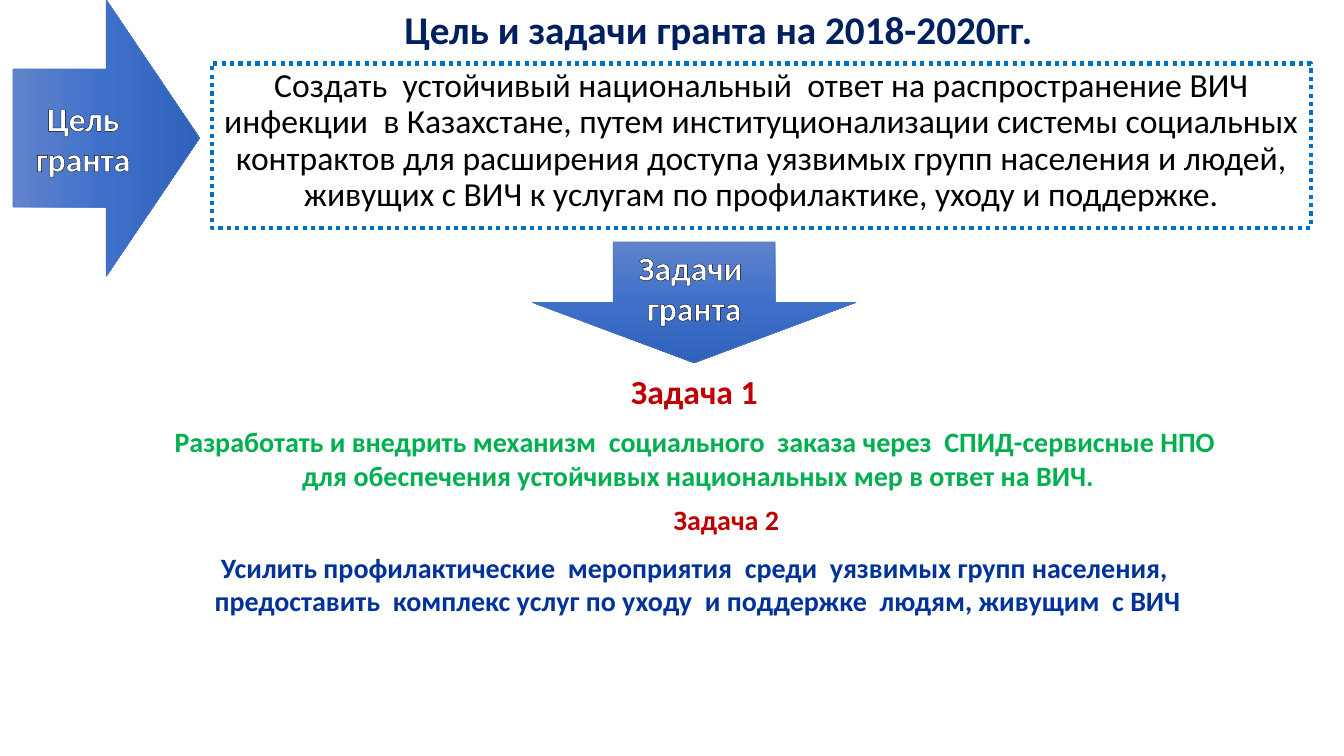
import copy
from dataclasses import dataclass

import pptx
import pptx.dml.color
import pptx.enum.dml
import pptx.enum.shapes
import pptx.enum.text
import pptx.oxml
import pptx.oxml.ns
import pptx.util

Inches = pptx.util.Inches
Pt = pptx.util.Pt
qn = pptx.oxml.ns.qn
MSO_SHAPE = pptx.enum.shapes.MSO_SHAPE
MSO_ANCHOR = pptx.enum.text.MSO_ANCHOR


@dataclass(frozen=True)
class Theme:
    font: str = "Calibri"
    title_size: int = 28
    main_size: int = 24
    task_size: int = 20
    navy: str = "002060"
    black: str = "000000"
    white: str = "FFFFFF"
    red: str = "C00000"
    green: str = "00B050"
    blue: str = "003399"
    frame: str = "0070C0"
    arrow_line: str = "4472C4"
    arrow_gradient: tuple = ("6183CB", "3E70CA", "3062BB")


def rgb(value):
    return pptx.dml.color.RGBColor.from_string(value)


class SlideBuilder:
    def __init__(self, presentation, theme):
        self.theme = theme
        layout = presentation.slide_layouts.get_by_name("Title and Content")
        self.slide = presentation.slides.add_slide(layout)

    def place(self, shape, box):
        shape.left, shape.top, shape.width, shape.height = map(Inches, box)

    def add_text(self, paragraph, text, size, color, bold=True):
        paragraph.alignment = pptx.enum.text.PP_ALIGN.CENTER
        run = paragraph.add_run()
        run.text = text
        run.font.name = self.theme.font
        run.font.size = Pt(size)
        run.font.bold = bold
        run.font.color.rgb = rgb(color)
        return run

    def title(self, text, box):
        shape = self.slide.shapes.title
        self.place(shape, box)
        frame = shape.text_frame
        frame.auto_size = pptx.enum.text.MSO_AUTO_SIZE.NONE
        frame.vertical_anchor = MSO_ANCHOR.MIDDLE
        paragraph = frame.paragraphs[0]
        paragraph.line_spacing = 0.9
        self.add_text(paragraph, text, self.theme.title_size, self.theme.navy)

    def goal(self, text, box):
        """Fill the body placeholder as a dotted frame with unbulleted text."""
        shape = self.slide.placeholders[1]
        self.place(shape, box)
        shape.fill.solid()
        shape.fill.fore_color.rgb = rgb(self.theme.white)
        shape.line.color.rgb = rgb(self.theme.frame)
        shape.line.width = Pt(3)
        shape.line.dash_style = pptx.enum.dml.MSO_LINE.ROUND_DOT
        shape.text_frame.auto_size = pptx.enum.text.MSO_AUTO_SIZE.NONE
        paragraph = shape.text_frame.paragraphs[0]
        paragraph.line_spacing = 0.9
        paragraph.space_before = Pt(10)
        self.add_text(paragraph, text, self.theme.main_size, self.theme.black, bold=False)
        properties = paragraph._p.get_or_add_pPr()
        properties.set("marL", "0")
        properties.set("indent", "0")
        properties.append(pptx.oxml.parse_xml(
            f'<a:buNone {pptx.oxml.ns.nsdecls("a")}/>'))

    def arrow(self, kind, text, box, angle):
        shape = self.slide.shapes.add_shape(kind, *map(Inches, box))
        shape.shadow.inherit = False
        shape.line.color.rgb = rgb(self.theme.arrow_line)
        shape.line.width = Pt(0.5)
        self.fill_gradient(shape, angle)
        frame = shape.text_frame
        frame.word_wrap = True
        frame.vertical_anchor = MSO_ANCHOR.MIDDLE
        frame.margin_left = frame.margin_right = Inches(0.08)
        frame.margin_top = frame.margin_bottom = Inches(0.04)
        run = self.add_text(frame.paragraphs[0], text, self.theme.main_size, self.theme.white)
        outline = pptx.oxml.parse_xml(
            f'<a:ln {pptx.oxml.ns.nsdecls("a")} w="{Pt(1)}"><a:solidFill>'
            f'<a:srgbClr val="{self.theme.black}"/></a:solidFill></a:ln>')
        run._r.get_or_add_rPr().insert(0, outline)

    def fill_gradient(self, shape, angle):
        colors = self.theme.arrow_gradient
        shape.fill.gradient()
        shape.fill.gradient_angle = angle
        stops = shape._element.spPr.find(qn("a:gradFill")).find(qn("a:gsLst"))
        while len(stops) < len(colors):
            stops.append(copy.deepcopy(stops[0]))
        for index, (stop, color) in enumerate(zip(shape.fill.gradient_stops, colors)):
            stop.position = index / (len(colors) - 1)
            stop.color.rgb = rgb(color)

    def task(self, heading, heading_size, lines, color, box, heading_indent=0):
        shape = self.slide.shapes.add_textbox(*map(Inches, box))
        frame = shape.text_frame
        frame.word_wrap = True
        paragraph = frame.paragraphs[0]
        self.add_text(paragraph, heading, heading_size, self.theme.red)
        paragraph.space_after = Pt(9.8)
        paragraph._p.get_or_add_pPr().set("marL", str(Inches(heading_indent)))
        for line in lines:
            self.add_text(frame.add_paragraph(), line, self.theme.task_size, color)


def main():
    theme = Theme()
    presentation = pptx.Presentation()
    presentation.slide_width = Inches(13.33)
    presentation.slide_height = Inches(7.5)
    builder = SlideBuilder(presentation, theme)

    builder.title("Цель и задачи гранта на 2018-2020гг.", (0.92, 0, 12.41, 0.63))
    builder.goal(
        "Создать  устойчивый национальный  ответ на распространение ВИЧ инфекции  "
        "в Казахстане, путем институционализации системы социальных контрактов для "
        "расширения доступа уязвимых групп населения и людей, живущих с ВИЧ к услугам "
        "по профилактике, уходу и поддержке.",
        (2.1, 0.63, 10.9, 1.63))
    builder.arrow(MSO_SHAPE.RIGHT_ARROW, "Цель гранта", (0.13, 0, 1.85, 2.74), 0)
    builder.arrow(MSO_SHAPE.DOWN_ARROW, "Задачи  гранта", (5.28, 2.4, 3.21, 1.2), 270)
    builder.task(
        "Задача 1 ", theme.main_size,
        ["Разработать и внедрить механизм  социального  заказа через  СПИД-сервисные НПО ",
         "для обеспечения устойчивых национальных мер в ответ на ВИЧ."],
        theme.green, (1.58, 3.63, 10.69, 1.31))
    builder.task(
        "Задача 2", theme.task_size,
        ["Усилить профилактические  мероприятия  среди  уязвимых групп населения,",
         " предоставить  комплекс услуг по уходу  и поддержке  людям, живущим  с ВИЧ"],
        theme.blue, (0.61, 4.94, 12.56, 1.92), heading_indent=0.63)

    presentation.save("out.pptx")


if __name__ == "__main__":
    main()
